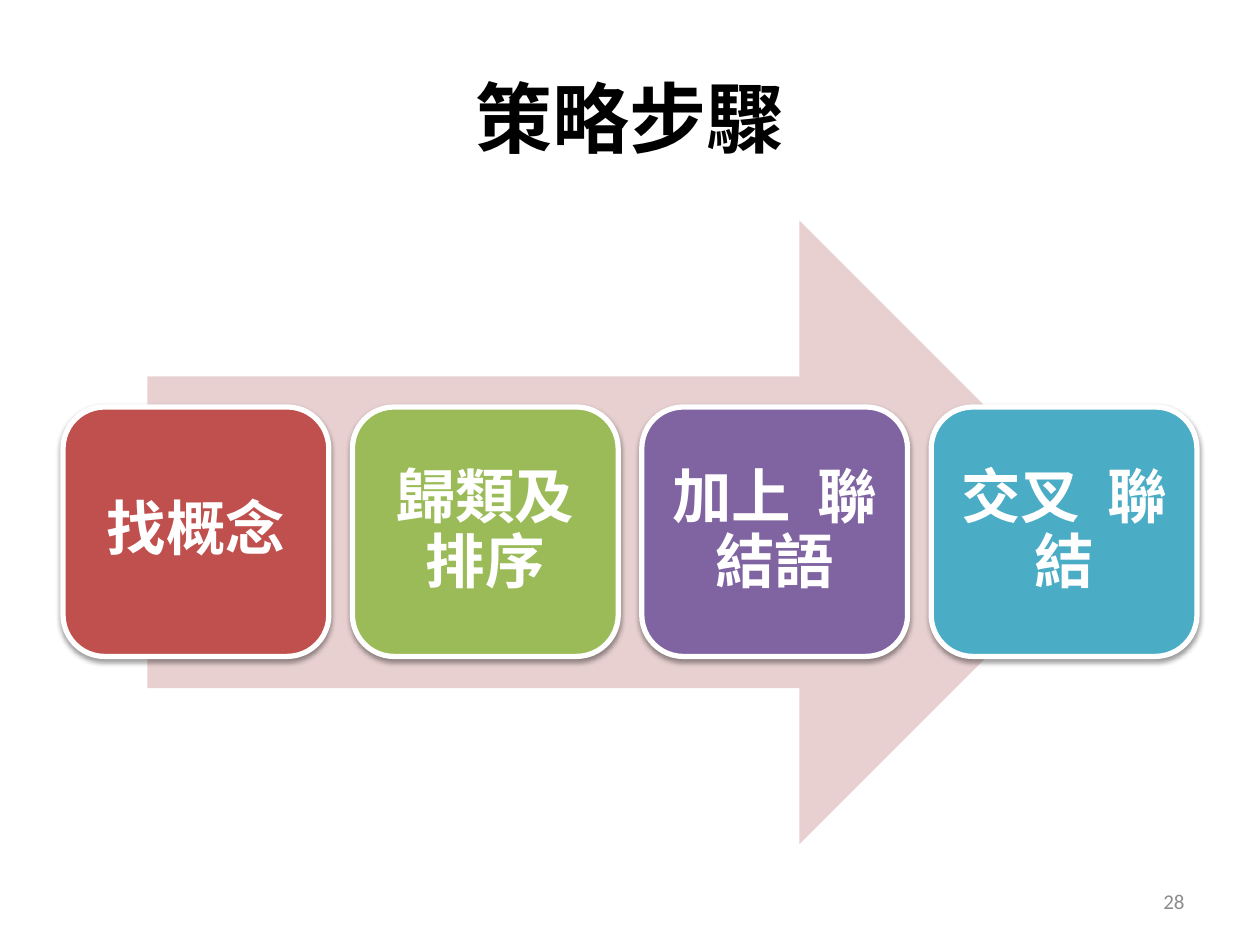
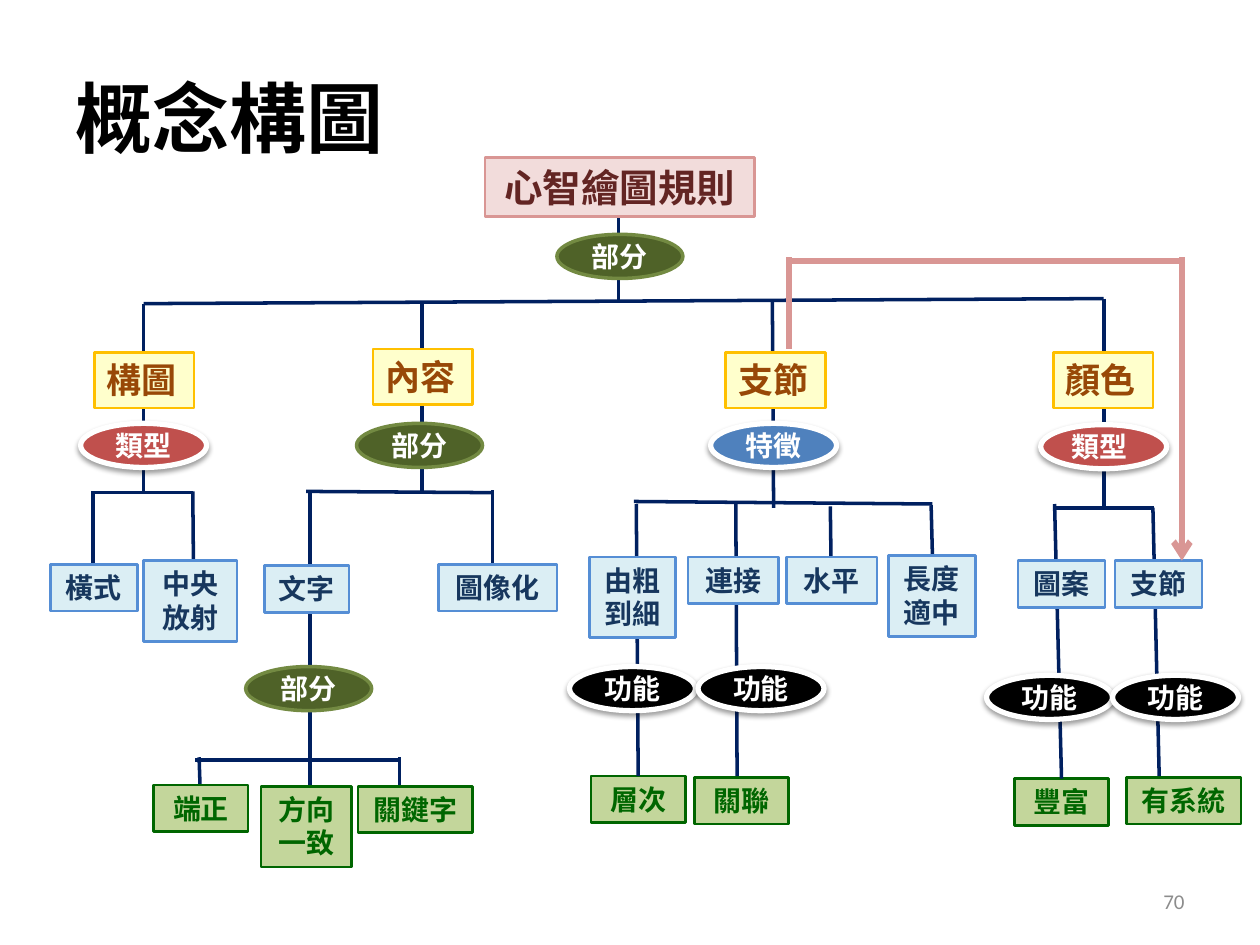
from dataclasses import dataclass
from typing import NamedTuple, Optional

from lxml.etree import SubElement
from pptx import Presentation
from pptx.dml.color import RGBColor
from pptx.enum.shapes import MSO_CONNECTOR, MSO_SHAPE
from pptx.enum.text import MSO_ANCHOR, MSO_AUTO_SIZE, PP_ALIGN
from pptx.oxml.ns import qn
from pptx.util import Emu, Inches, Pt

COLORS = {
    "black": "000000", "white": "FFFFFF", "gray": "8C8C8C",
    "red": "C0504D", "green": "9BBB59", "purple": "8064A2",
    "aqua": "4BACC6", "blue": "4F81BD", "pale_red": "E8D0D0",
    "navy": "002060", "rose": "D99694", "blush": "F2DCDB", "maroon": "632523",
    "cream": "FFFFCC", "gold": "FFC000", "brown": "984807",
    "ice": "DBEEF4", "sky": "558ED5", "ink": "17375E",
    "leaf": "C3D69B", "forest": "006600", "olive": "4F6228", "moss": "738A42",
}
CJK, LATIN = "Noto Sans CJK SC", "Calibri"
COLUMNS, ROWS = 10, 7.5
TITLE_LAYOUT = 5
LINE_HEIGHTS = {1: 0.37, 2: 0.64}

prs = Presentation()
prs.slide_width, prs.slide_height = Inches(10), Inches(7.5)


@dataclass(frozen=True)
class Style:
    fill: str
    line: Optional[str]
    color: str = "white"
    size: float = 16
    width: float = 1.5
    shadow: bool = False
    align: PP_ALIGN = PP_ALIGN.CENTER


class Node(NamedTuple):
    text: str
    x: float
    y: float
    w: float
    lines: int = 1


class Link(NamedTuple):
    text: str
    x: float
    y: float
    style: Style
    align: PP_ALIGN = PP_ALIGN.CENTER


class Branch(NamedTuple):
    x1: float
    y1: float
    x2: float
    y2: float
    target: Optional[str] = None


ROOT = Style("blush", "rose", "maroon", 22)
TOPIC = Style("cream", "gold", "brown", 20, align=PP_ALIGN.LEFT)
DETAIL = Style("ice", "sky", "ink")
RESULT = Style("leaf", "forest", "forest")
PART = Style("olive", "moss", width=2)
TYPE = Style("red", "white", width=3, shadow=True)
FEATURE = Style("blue", "white", width=3, shadow=True)
FUNCTION = Style("black", "white", width=3, shadow=True)
ARROW = Style("pale_red", None)

STEPS = [("找概念", "red"), ("歸類及排序", "green"),
         ("加上  聯結語", "purple"), ("交叉  聯結", "aqua")]

TOPICS = [Node("構圖", 0.75, 2.8, 0.79), Node("內容", 2.96, 2.77, 0.79),
          Node("支節", 5.76, 2.8, 0.79), Node("顏色", 8.36, 2.8, 0.79)]
DETAILS = [
    Node("中央放射", 1.14, 4.45, 0.74, 2), Node("橫式", 0.4, 4.48, 0.69),
    Node("文字", 2.1, 4.49, 0.67), Node("圖像化", 3.48, 4.48, 0.94),
    Node("由粗到細", 4.68, 4.42, 0.68, 2), Node("連接", 5.46, 4.42, 0.72),
    Node("水平", 6.24, 4.42, 0.72), Node("長度適中", 7.05, 4.41, 0.69, 2),
    Node("圖案", 8.08, 4.45, 0.69), Node("支節", 8.85, 4.45, 0.69),
]
BACK_RESULTS = [Node("層次", 4.69, 6.16, 0.75), Node("關聯", 5.51, 6.17, 0.75),
                Node("豐富", 8.05, 6.18, 0.75), Node("有系統", 8.94, 6.17, 0.91)]
FRONT_RESULTS = [Node("端正", 1.22, 6.23, 0.75), Node("方向一致", 2.07, 6.24, 0.72, 2),
                 Node("關鍵字", 2.84, 6.24, 0.91)]
LINKS = [
    Link("部分", 4.42, 1.86, PART), Link("類型", 0.64, 3.36, TYPE),
    Link("部分", 2.83, 3.36, PART), Link("部分", 1.95, 5.29, PART),
    Link("特徵", 5.64, 3.36, FEATURE), Link("功能", 4.52, 5.29, FUNCTION),
    Link("功能", 5.54, 5.29, FUNCTION),
    Link("類型", 8.26, 3.37, TYPE, PP_ALIGN.LEFT),
    Link("功能", 7.83, 5.36, FUNCTION), Link("功能", 8.83, 5.36, FUNCTION),
]
BARS = [Branch(1.14, 2.41, 8.76, 2.37), Branch(0.75, 3.91, 1.53, 3.91),
        Branch(2.43, 3.9, 3.91, 3.91), Branch(5.03, 3.98, 7.4, 4),
        Branch(8.37, 4.03, 9.16, 4.03), Branch(1.55, 6.03, 3.17, 6.03)]
STEMS = [
    Branch(4.91, 1.68, 4.91, 2.39), Branch(1.14, 2.41, 1.14, 3.91),
    Branch(3.35, 2.39, 3.35, 3.91), Branch(6.13, 2.39, 6.14, 4.03),
    Branch(8.76, 2.37, 8.76, 4.03), Branch(0.74, 3.9, 0.74, 4.61),
    Branch(1.53, 3.9, 1.54, 4.95), Branch(2.46, 3.89, 2.46, 6.31),
    Branch(3.91, 3.89, 3.91, 4.64), Branch(5.05, 4, 5.07, 6.16, "層次"),
    Branch(5.84, 4, 5.85, 6.16), Branch(6.59, 4.02, 6.6, 4.79),
    Branch(7.39, 4.01, 7.41, 4.77), Branch(8.37, 4, 8.43, 6.18, "豐富"),
    Branch(9.15, 4.03, 9.2, 6.16), Branch(1.58, 6.01, 1.6, 6.6),
    Branch(3.17, 6.01, 3.17, 6.39),
]
CROSS_LINKS = [Branch(6.26, 2.07, 9.38, 2.07), Branch(6.26, 2.04, 6.26, 2.77)]
CROSS_ARROW = Branch(9.38, 2.04, 9.38, 4.45)


def col(n: float) -> Emu:
    return Emu(round(prs.slide_width * n / COLUMNS))


def row(n: float) -> Emu:
    return Emu(round(prs.slide_height * n / ROWS))


def rgb(name: str) -> RGBColor:
    return RGBColor.from_string(COLORS[name])


def set_text(tf, text: str, size: float, color: str, align: PP_ALIGN,
             font: str = CJK, bold: bool = True) -> None:
    tf.text = text
    tf.word_wrap = True
    p = tf.paragraphs[0]
    p.alignment = align
    r = p.runs[0]
    r.font.name = font
    r.font.size = Pt(size)
    r.font.bold = bold
    r.font.color.rgb = rgb(color)
    SubElement(r.font._element, qn("a:ea")).set("typeface", font)


def add_slide(title: str, align: PP_ALIGN, number: int):
    s = prs.slides.add_slide(prs.slide_layouts[TITLE_LAYOUT])
    sp = s.shapes.title
    sp.left, sp.top, sp.width, sp.height = col(0.5), row(0.3), col(9), row(1.25)
    set_text(sp.text_frame, title, 44, "black", align)
    sp.text_frame.vertical_anchor = MSO_ANCHOR.MIDDLE
    sp = s.shapes.add_textbox(col(7.17), row(6.95), col(2.33), row(0.4))
    set_text(sp.text_frame, str(number), 12, "gray", PP_ALIGN.RIGHT, LATIN, False)
    sp.text_frame.vertical_anchor = MSO_ANCHOR.MIDDLE
    return s


def add_shadow(sp) -> None:
    effects = sp._element.spPr.find(qn("a:effectLst"))
    shadow = SubElement(effects, qn("a:outerShdw"), blurRad=str(Pt(3.1)),
                        dist=str(Pt(1.6)), dir="5400000", rotWithShape="0")
    color = SubElement(shadow, qn("a:srgbClr"), val=COLORS["black"])
    SubElement(color, qn("a:alpha"), val="38000")


def add_block(s, kind: MSO_SHAPE, x: float, y: float, w: float, h: float,
              style: Style, text: str = "", align: Optional[PP_ALIGN] = None):
    sp = s.shapes.add_shape(kind, col(x), row(y), col(w), row(h))
    sp.fill.solid()
    sp.fill.fore_color.rgb = rgb(style.fill)
    if style.line:
        sp.line.color.rgb = rgb(style.line)
        sp.line.width = Pt(style.width)
    else:
        sp.line.fill.background()
    sp.shadow.inherit = False
    if style.shadow:
        add_shadow(sp)
    if text:
        set_text(sp.text_frame, text, style.size, style.color, align or style.align)
    return sp


def add_node(s, node: Node, style: Style, height: Optional[float] = None):
    sp = add_block(s, MSO_SHAPE.RECTANGLE, node.x, node.y, node.w,
                   height or LINE_HEIGHTS[node.lines], style, node.text)
    sp.text_frame.vertical_anchor = MSO_ANCHOR.TOP
    sp.text_frame.auto_size = MSO_AUTO_SIZE.SHAPE_TO_FIT_TEXT
    return sp


def add_branch(s, branch: Branch, color: str, width: float):
    c = s.shapes.add_connector(MSO_CONNECTOR.STRAIGHT, col(branch.x1), row(branch.y1),
                               col(branch.x2), row(branch.y2))
    c.line.color.rgb = rgb(color)
    c.line.width = Pt(width)
    SubElement(c._element.spPr, qn("a:effectLst"))
    return c


def build_steps() -> None:
    s = add_slide("策略步驟", PP_ALIGN.CENTER, 28)
    add_block(s, MSO_SHAPE.RIGHT_ARROW, 1.17, 1.75, 7.65, 4.95, ARROW)
    left, span, width = 0.5, 9, 2.11
    pitch = (span - width) / (len(STEPS) - 1)
    for i, (text, fill) in enumerate(STEPS):
        style = Style(fill, "white", size=34, width=3, shadow=True)
        sp = add_block(s, MSO_SHAPE.ROUNDED_RECTANGLE, left + i * pitch, 3.23,
                       width, 1.98, style, text)
        tf = sp.text_frame
        tf.margin_left = tf.margin_right = col(0.13)
        tf.margin_top = tf.margin_bottom = row(0.14)
        tf.paragraphs[0].line_spacing = 0.9


def build_concept_map() -> None:
    s = add_slide("概念構圖", PP_ALIGN.LEFT, 70)
    results = {node.text: add_node(s, node, RESULT) for node in BACK_RESULTS}
    for branch in BARS + STEMS:
        c = add_branch(s, branch, "navy", 2)
        if branch.target:
            c.end_connect(results[branch.target], 0)
    for node in TOPICS:
        add_node(s, node, TOPIC, 0.44)
    for node in DETAILS:
        add_node(s, node, DETAIL)
    for node in FRONT_RESULTS:
        add_node(s, node, RESULT)
    for link in LINKS:
        add_block(s, MSO_SHAPE.OVAL, link.x, link.y, 1, 0.35,
                  link.style, link.text, link.align)
    arrow = add_branch(s, CROSS_ARROW, "rose", 3.5)
    SubElement(arrow.line._get_or_add_ln(), qn("a:tailEnd"), type="arrow")
    for branch in CROSS_LINKS:
        add_branch(s, branch, "rose", 3.5)
    add_node(s, Node("心智繪圖規則", 3.85, 1.25, 2.14), ROOT, 0.47)


def main() -> None:
    build_steps()
    build_concept_map()
    prs.save("out.pptx")


if __name__ == "__main__":
    main()
